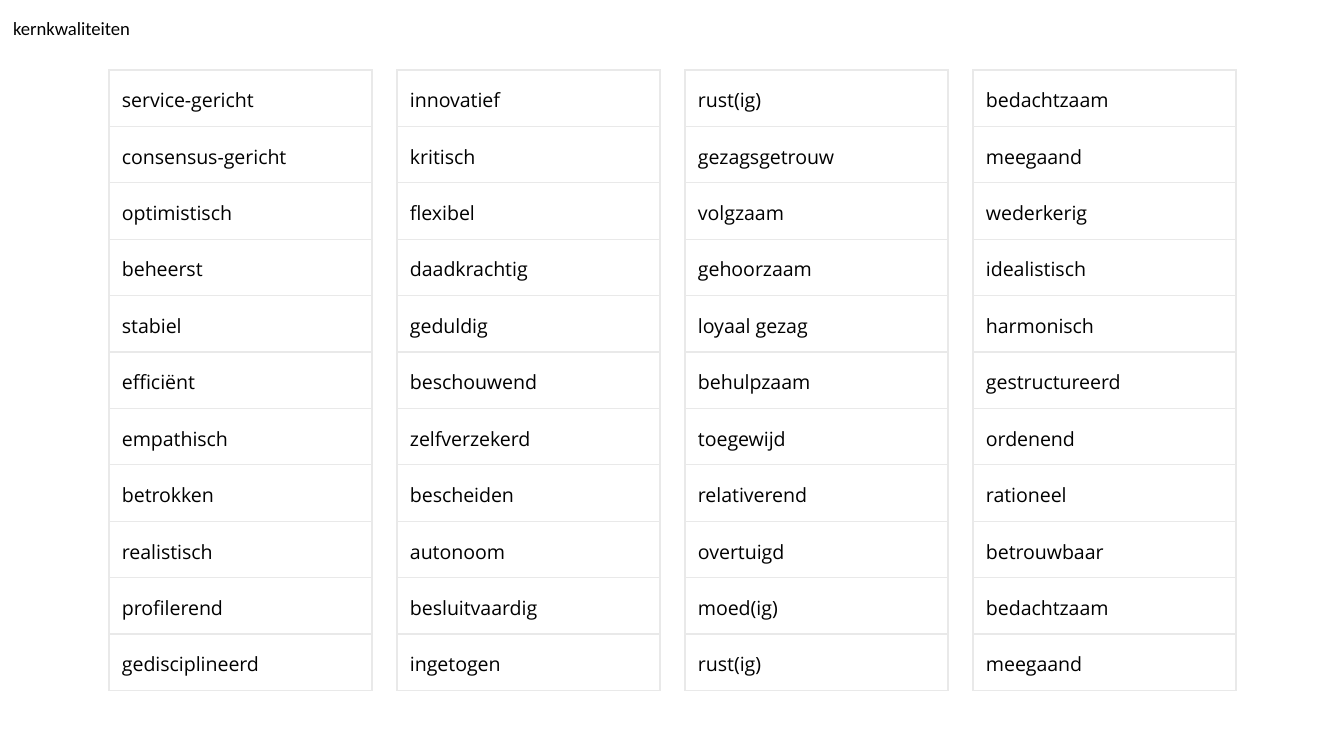
import lxml.etree
import pptx
import pptx.dml.color
import pptx.enum.text
import pptx.oxml.ns
import pptx.util

TITLE = "kernkwaliteiten"
QUALITIES = [
    ["service-gericht", "consensus-gericht", "optimistisch", "beheerst",
     "stabiel", "efficiënt", "empathisch", "betrokken", "realistisch",
     "profilerend", "gedisciplineerd"],
    ["innovatief", "kritisch", "flexibel", "daadkrachtig", "geduldig",
     "beschouwend", "zelfverzekerd", "bescheiden", "autonoom",
     "besluitvaardig", "ingetogen"],
    ["rust(ig)", "gezagsgetrouw", "volgzaam", "gehoorzaam", "loyaal gezag",
     "behulpzaam", "toegewijd", "relativerend", "overtuigd", "moed(ig)",
     "rust(ig)"],
    ["bedachtzaam", "meegaand", "wederkerig", "idealistisch", "harmonisch",
     "gestructureerd", "ordenend", "rationeel", "betrouwbaar", "bedachtzaam",
     "meegaand"],
]
COLORS = {"text": "000000", "cell": "FFFFFF", "border": "E9E9E9"}

PX = pptx.util.Inches(1) / 134.4
SLIDE_SIZE = (1344, 756)
TITLE_BOX = (0, 0, 274, 598)
LIST_LEFT, LIST_TOP = 109, 70
LIST_WIDTH, LIST_GAP = 263, 25
ROW_HEIGHT = 56
INSET = 13


def px(length):
    return pptx.util.Emu(round(length * PX))


def rgb(name):
    return pptx.dml.color.RGBColor.from_string(COLORS[name])


def set_insets(target):
    target.margin_left = target.margin_right = px(INSET)
    target.margin_top = target.margin_bottom = px(INSET)


def style_paragraph(paragraph, font_name, size):
    paragraph.alignment = pptx.enum.text.PP_ALIGN.LEFT
    paragraph.line_spacing = 1.15
    paragraph.font.name = font_name
    paragraph.font.size = pptx.util.Pt(size)
    paragraph.font.color.rgb = rgb("text")


def add_borders(cell):
    properties = cell._tc.get_or_add_tcPr()
    qn = pptx.oxml.ns.qn
    for side in ("a:lnL", "a:lnR", "a:lnT", "a:lnB"):
        line = lxml.etree.SubElement(
            properties, qn(side), w=str(pptx.util.Pt(0.75)))
        fill = lxml.etree.SubElement(line, qn("a:solidFill"))
        lxml.etree.SubElement(fill, qn("a:srgbClr"), val=COLORS["border"])


def add_list(slide, column, qualities):
    left = LIST_LEFT + column * (LIST_WIDTH + LIST_GAP)
    table = slide.shapes.add_table(
        len(qualities), 1, px(left), px(LIST_TOP),
        px(LIST_WIDTH), px(ROW_HEIGHT * len(qualities))).table
    table.first_row = table.horz_banding = False
    for row, quality in enumerate(qualities):
        table.rows[row].height = px(ROW_HEIGHT)
        cell = table.cell(row, 0)
        cell.text = quality
        set_insets(cell)
        add_borders(cell)
        cell.fill.solid()
        cell.fill.fore_color.rgb = rgb("cell")
        style_paragraph(cell.text_frame.paragraphs[0], "Open Sans", 10.5)


def add_title(slide):
    title = slide.shapes.title
    title.left, title.top, title.width, title.height = map(px, TITLE_BOX)
    frame = title.text_frame
    frame.text = TITLE
    frame.word_wrap = True
    frame.auto_size = pptx.enum.text.MSO_AUTO_SIZE.NONE
    frame.vertical_anchor = pptx.enum.text.MSO_ANCHOR.TOP
    set_insets(frame)
    style_paragraph(frame.paragraphs[0], "Calibri", 10)
    frame.paragraphs[0].space_after = pptx.util.Pt(12)


def main():
    deck = pptx.Presentation()
    deck.slide_width, deck.slide_height = map(px, SLIDE_SIZE)
    slide = deck.slides.add_slide(deck.slide_layouts.get_by_name("Title Only"))
    add_title(slide)
    for column, qualities in enumerate(QUALITIES):
        add_list(slide, column, qualities)
    deck.save("out.pptx")


if __name__ == "__main__":
    main()
